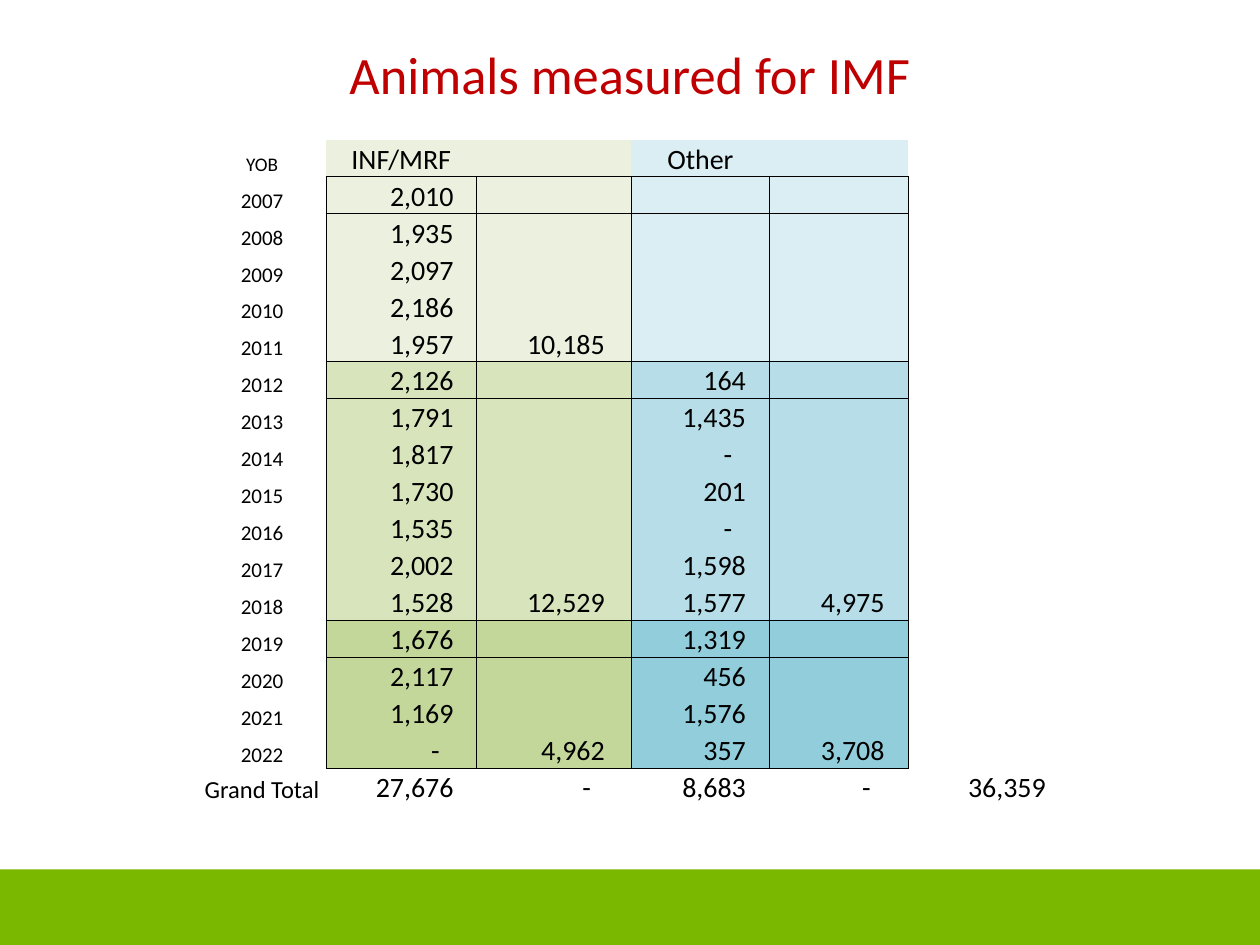
from lxml.etree import SubElement
from pptx import Presentation
from pptx.dml.color import RGBColor
from pptx.enum.shapes import MSO_SHAPE
from pptx.enum.text import MSO_ANCHOR, PP_ALIGN
from pptx.oxml import parse_xml
from pptx.oxml.ns import nsdecls, qn
from pptx.util import Inches, Pt

WIDTH, HEIGHT = Inches(10), Inches(7.5)
FONT = "Calibri"
PLAIN_STYLE = "{2D5ABB26-0587-4C30-8999-92F81FD0307C}"
COLUMN_WEIGHTS = [1.02, 1.19, 1.23, 1.1, 1.1, 1.21]
NUMBER_INSETS = [0.01, 0.18, 0.21, 0.19, 0.19, 0.12]
DASH_SHIFT = 0.11
ROWS = [
    ["YOB", "INF/MRF", "", "Other", "", ""],
    ["2007", "2,010", "", "", "", ""],
    ["2008", "1,935", "", "", "", ""],
    ["2009", "2,097", "", "", "", ""],
    ["2010", "2,186", "", "", "", ""],
    ["2011", "1,957", "10,185", "", "", ""],
    ["2012", "2,126", "", "164", "", ""],
    ["2013", "1,791", "", "1,435", "", ""],
    ["2014", "1,817", "", "-", "", ""],
    ["2015", "1,730", "", "201", "", ""],
    ["2016", "1,535", "", "-", "", ""],
    ["2017", "2,002", "", "1,598", "", ""],
    ["2018", "1,528", "12,529", "1,577", "4,975", ""],
    ["2019", "1,676", "", "1,319", "", ""],
    ["2020", "2,117", "", "456", "", ""],
    ["2021", "1,169", "", "1,576", "", ""],
    ["2022", "-", "4,962", "357", "3,708", ""],
    ["Grand Total", "27,676", "-", "8,683", "-", "36,359"],
]
PERIODS = [
    (0, 0, "EBF1DE", "DAEEF3"),
    (1, 5, "EBF1DE", "DAEEF3"),
    (6, 12, "D8E4BC", "B7DEE8"),
    (13, 16, "C4D79B", "92CDDC"),
]


def color(code):
    """Turn a hex string into a colour."""
    return RGBColor.from_string(code)


def apply(target, formats):
    """Set each attribute named in a dict of format values."""
    for name, value in formats.items():
        setattr(target, name, value)


def place(box):
    """Convert a box in percent of the slide to lengths."""
    left, top, width, height = (share / 100 for share in box)
    return {
        "left": round(left * WIDTH),
        "top": round(top * HEIGHT),
        "width": round(width * WIDTH),
        "height": round(height * HEIGHT),
    }


def write(paragraph, text, size, code, align):
    """Put one formatted run into a paragraph."""
    paragraph.alignment = align
    run = paragraph.add_run()
    run.text = text
    apply(run.font, {"name": FONT, "size": Pt(size), "bold": False})
    run.font.color.rgb = color(code)


def add_title(slide, box):
    """Place and fill the title placeholder."""
    title = slide.shapes.title
    apply(title, place(box))
    apply(title.text_frame, {"vertical_anchor": MSO_ANCHOR.MIDDLE, "word_wrap": True})
    write(title.text_frame.paragraphs[0], "Animals measured for IMF", 30, "C00000", PP_ALIGN.CENTER)


def add_footer_band(slide, box):
    """Draw the green band along the foot of the slide."""
    band = slide.shapes.add_shape(MSO_SHAPE.RECTANGLE, **place(box))
    band.shadow.inherit = False
    band.fill.solid()
    band.fill.fore_color.rgb = color("7AB800")
    band.line.fill.background()


def add_borders(cell, sides):
    """Draw thin black borders on the listed sides of a cell."""
    for position, side in enumerate(side for side in "LRTB" if side in sides):
        border = parse_xml(
            f'<a:ln{side} {nsdecls("a")} w="{Pt(0.5)}"><a:solidFill>'
            f'<a:srgbClr val="000000"/></a:solidFill></a:ln{side}>'
        )
        cell._tc.get_or_add_tcPr().insert(position, border)


def fill_cell(cell, text, row, column):
    """Write a label or a right-aligned figure into a cell."""
    is_label = row == 0 or column == 0
    inset = 0.01 if is_label else NUMBER_INSETS[column] + DASH_SHIFT * (text == "-")
    apply(cell, {
        "margin_left": Inches(0.01),
        "margin_right": Inches(inset),
        "margin_top": Inches(0.01),
        "margin_bottom": 0,
        "vertical_anchor": MSO_ANCHOR.BOTTOM,
    })
    cell.fill.background()
    paragraph = cell.text_frame.paragraphs[0]
    if text:
        label_size = {"YOB": 11, "Grand Total": 14}.get(text, 12)
        size = label_size if column == 0 else 16
        write(paragraph, text, size, "000000", PP_ALIGN.CENTER if is_label else PP_ALIGN.RIGHT)
    else:
        SubElement(paragraph._p, qn("a:endParaRPr"), sz="1200")


def shade_period(table, first, last, fills):
    """Colour and frame the two column pairs of a period."""
    for row in range(first, last + 1):
        for column in range(1, 5):
            cell = table.cell(row, column)
            cell.fill.solid()
            cell.fill.fore_color.rgb = color(fills[(column - 1) // 2])
            if first > 0:
                sides = "L" if column % 2 else "R"
                sides += "T" * (row == first) + "B" * (row == last)
                add_borders(cell, sides)


def add_counts_table(slide, box):
    """Build the table of animals by year of birth."""
    area = place(box)
    table = slide.shapes.add_table(len(ROWS), len(COLUMN_WEIGHTS), **area).table
    apply(table, {"first_row": False, "horz_banding": False})
    table._tbl.tblPr.find(qn("a:tableStyleId")).text = PLAIN_STYLE
    for column, weight in zip(table.columns, COLUMN_WEIGHTS):
        column.width = round(area["width"] * weight / sum(COLUMN_WEIGHTS))
    for row, values in enumerate(ROWS):
        table.rows[row].height = round(area["height"] / len(ROWS))
        for column, text in enumerate(values):
            fill_cell(table.cell(row, column), text, row, column)
    for first, last, *fills in PERIODS:
        shade_period(table, first, last, fills)


def main():
    """Build the slide and save it."""
    presentation = Presentation()
    apply(presentation, {"slide_width": WIDTH, "slide_height": HEIGHT})
    slide = presentation.slides.add_slide(presentation.slide_layouts[5])
    add_footer_band(slide, (0, 92, 100, 8))
    add_title(slide, (5, 4, 90, 7.5))
    add_counts_table(slide, (15.7, 14.8, 68.5, 70.4))
    presentation.save("out.pptx")


if __name__ == "__main__":
    main()
